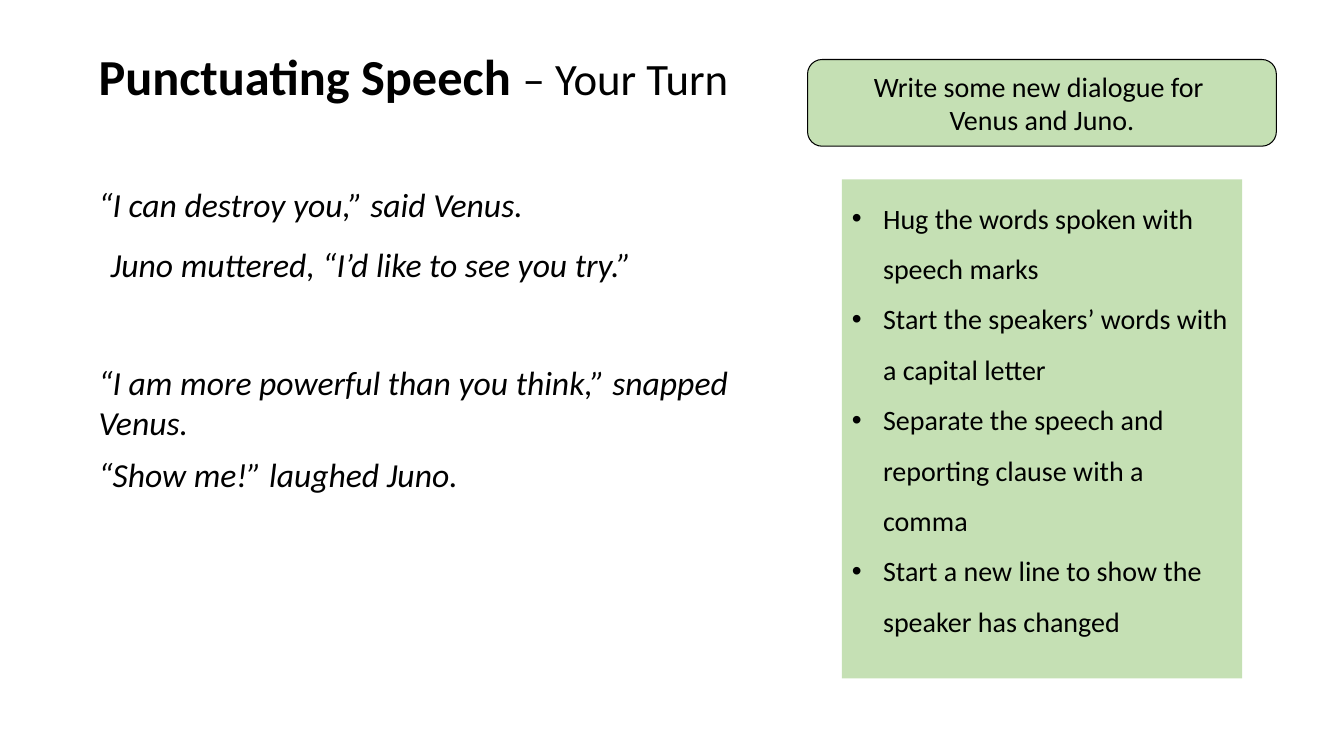
from dataclasses import dataclass

from lxml import etree
from pptx import Presentation
from pptx.dml.color import RGBColor
from pptx.enum import shapes, text
from pptx.oxml import ns
from pptx.util import Inches, Pt


@dataclass(frozen=True)
class Theme:
    font: str = "Calibri"
    ink: RGBColor = RGBColor(0x00, 0x00, 0x00)
    panel: RGBColor = RGBColor(0xC5, 0xE0, 0xB4)
    title: Pt = Pt(36)
    subtitle: Pt = Pt(32)
    dialogue: Pt = Pt(24)
    note: Pt = Pt(20)


THEME = Theme()
WIDTH, HEIGHT = Inches(13.33), Inches(7.5)
MARGIN = 6.6
BODY_TOP = 23.73
ROW_STEP = 7.83

DIALOGUE = [
    (0, MARGIN, 6.67, "“I can destroy you,” said Venus."),
    (1, 7.5, 6.67, "Juno muttered, “I’d like to see you try.”"),
    (3, MARGIN, 12.13, "“I am more powerful than you think,” snapped Venus."),
    (4.55, MARGIN, 6.67, "“Show me!” laughed Juno."),
]
TASK = ["Write some new dialogue for ", "Venus and Juno."]
CHECKLIST = [
    "Hug the words spoken with speech marks",
    "Start the speakers’ words with a capital letter",
    "Separate the speech and reporting clause with a comma",
    "Start a new line to show the speaker has changed",
]


def place(left, top, width, height):
    return (
        int(WIDTH * left / 100),
        int(HEIGHT * top / 100),
        int(WIDTH * width / 100),
        int(HEIGHT * height / 100),
    )


def style(font, size, bold=False, italic=False):
    font.name = THEME.font
    font.size = size
    font.bold = bold
    font.italic = italic
    font.color.rgb = THEME.ink


def add_text_frame(slide, box):
    frame = slide.shapes.add_textbox(*place(*box)).text_frame
    frame.word_wrap = True
    return frame


def add_title(slide, box, heading, subtitle):
    paragraph = add_text_frame(slide, box).paragraphs[0]
    for words, size, bold in (
        (heading, THEME.title, True),
        (subtitle, THEME.subtitle, False),
    ):
        run = paragraph.add_run()
        run.text = words
        style(run.font, size, bold=bold)


def add_speech(slide, box, words):
    paragraph = add_text_frame(slide, box).paragraphs[0]
    paragraph.text = words
    style(paragraph.font, THEME.dialogue, italic=True)


def add_bullet(paragraph):
    properties = paragraph._p.get_or_add_pPr()
    properties.set("marL", str(Inches(0.31)))
    properties.set("indent", str(-Inches(0.31)))
    etree.SubElement(properties, ns.qn("a:buFont")).set("typeface", "Arial")
    etree.SubElement(properties, ns.qn("a:buChar")).set("char", "•")


def add_panel(slide, kind, box, lines, outlined=False, bulleted=False):
    shape = slide.shapes.add_shape(kind, *place(*box))
    shape.shadow.inherit = False
    shape.fill.solid()
    shape.fill.fore_color.rgb = THEME.panel
    if outlined:
        shape.line.color.rgb = THEME.ink
        shape.line.width = Pt(0.75)
    else:
        shape.line.fill.background()

    frame = shape.text_frame
    frame.word_wrap = True
    anchors = text.MSO_ANCHOR
    frame.vertical_anchor = anchors.TOP if bulleted else anchors.MIDDLE
    frame.text = "\n".join(lines)
    for paragraph in frame.paragraphs:
        if bulleted:
            add_bullet(paragraph)
            paragraph.line_spacing = 1.5
            paragraph.alignment = text.PP_ALIGN.LEFT
        else:
            paragraph.alignment = text.PP_ALIGN.CENTER
        style(paragraph.font, THEME.note)


def main():
    presentation = Presentation()
    presentation.slide_width, presentation.slide_height = WIDTH, HEIGHT
    slide = presentation.slides.add_slide(presentation.slide_layouts[6])

    add_title(
        slide, (MARGIN, 5.33, 86.72, 9.47), "Punctuating Speech ", "– Your Turn"
    )
    for row, left, height, words in DIALOGUE:
        add_speech(slide, (left, BODY_TOP + row * ROW_STEP, 50.64, height), words)
    add_panel(
        slide,
        shapes.MSO_SHAPE.ROUNDED_RECTANGLE,
        (60.09, 7.87, 34.88, 11.47),
        TASK,
        outlined=True,
    )
    add_panel(
        slide,
        shapes.MSO_SHAPE.RECTANGLE,
        (62.64, BODY_TOP, 29.78, 66),
        CHECKLIST,
        bulleted=True,
    )
    presentation.save("out.pptx")


if __name__ == "__main__":
    main()
